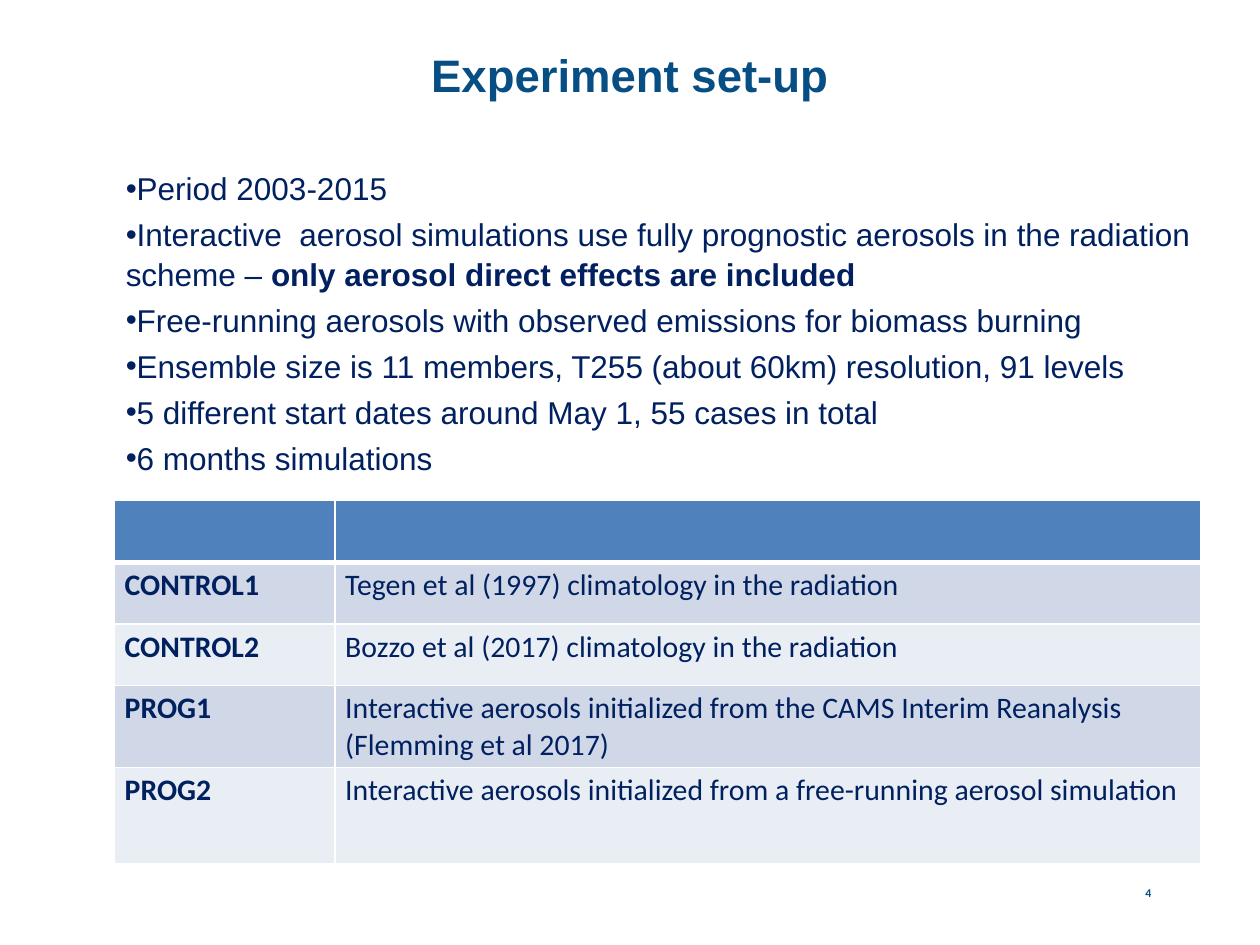
from pptx import Presentation
from pptx import util as u
from pptx.dml.color import RGBColor
from pptx.enum import text
from pptx.oxml import parse_xml
from pptx.oxml.ns import nsdecls

TEAL = RGBColor(0x06, 0x4E, 0x83)
NAVY = RGBColor(0x00, 0x20, 0x60)
WHITE = RGBColor(0xFF, 0xFF, 0xFF)
HEADER = RGBColor(0x4F, 0x81, 0xBD)
BANDS = (RGBColor(0xD0, 0xD8, 0xE8), RGBColor(0xE9, 0xED, 0xF4))

BULLETS = [
    ["Period 2003-2015"],
    ["Interactive  aerosol simulations use fully prognostic aerosols in the radiation scheme – ",
     "only aerosol direct effects are included"],
    ["Free-running aerosols with observed emissions for biomass burning"],
    ["Ensemble size is 11 members, T255 (about 60km) resolution, 91 levels"],
    ["5 different start dates around May 1, 55 cases in total"],
    ["6 months simulations"],
]
EXPERIMENTS = [
    ("", ""),
    ("CONTROL1", "Tegen et al (1997) climatology in the radiation"),
    ("CONTROL2", "Bozzo et al (2017) climatology in the radiation"),
    ("PROG1", "Interactive aerosols initialized from the CAMS Interim Reanalysis (Flemming et al 2017)"),
    ("PROG2", "Interactive aerosols initialized from a free-running aerosol simulation"),
]


class SlideBuilder:
    """Holds the style and the current slide; lengths are percentages of the slide size."""

    def __init__(self, presentation):
        self.width = presentation.slide_width
        self.height = presentation.slide_height
        self.slide = presentation.slides.add_slide(presentation.slide_layouts[6])

    def across(self, share):
        return u.Emu(round(self.width * share / 100))

    def down(self, share):
        return u.Emu(round(self.height * share / 100))

    def place(self, left, top, width, height):
        return self.across(left), self.down(top), self.across(width), self.down(height)

    def style(self, font, name, size, color, bold=False):
        font.name, font.size, font.bold = name, u.Pt(size), bold
        font.color.rgb = color

    def label(self, box, content, name, size, anchor):
        frame = self.slide.shapes.add_textbox(*self.place(*box)).text_frame
        frame.word_wrap = True
        frame.margin_left = frame.margin_right = frame.margin_top = frame.margin_bottom = 0
        frame.vertical_anchor = anchor
        frame.text = content
        paragraph = frame.paragraphs[0]
        paragraph.alignment = text.PP_ALIGN.CENTER
        self.style(paragraph.runs[0].font, name, size, TEAL, True)

    def bullets(self, box, items):
        frame = self.slide.shapes.add_textbox(*self.place(*box)).text_frame
        frame.word_wrap = True
        for index, parts in enumerate(items):
            paragraph = frame.add_paragraph() if index else frame.paragraphs[0]
            paragraph.line_spacing = 1.05
            if index:
                paragraph.space_before = u.Pt(3.6)
            properties = paragraph._p.get_or_add_pPr()
            properties.set("marL", "0")
            properties.set("indent", str(-u.Inches(0.07)))
            properties.append(parse_xml(f'<a:buFont {nsdecls("a")} typeface="Arial"/>'))
            properties.append(parse_xml(f'<a:buChar {nsdecls("a")} char="•"/>'))
            for position, part in enumerate(parts):
                run = paragraph.add_run()
                run.text = part
                self.style(run.font, "Arial", 18, NAVY, position > 0)

    def borders(self, cell, widths):
        properties = cell._tc.get_or_add_tcPr()
        for side, width in zip("LRTB", widths):
            properties.append(parse_xml(
                f'<a:ln{side} {nsdecls("a")} w="{u.Pt(width)}"><a:solidFill>'
                f'<a:srgbClr val="{WHITE}"/></a:solidFill></a:ln{side}>'))

    def table(self, box, rows, widths, heights):
        grid = self.slide.shapes.add_table(len(rows), len(widths), *self.place(*box)).table
        for column, width in zip(grid.columns, widths):
            column.width = self.across(width)
        for row, height in zip(grid.rows, heights):
            row.height = self.down(height)
        for r, row in enumerate(rows):
            for c, content in enumerate(row):
                cell = grid.cell(r, c)
                cell.margin_left = cell.margin_right = u.Inches(0.08)
                cell.margin_top = cell.margin_bottom = u.Inches(0.04)
                self.borders(cell, (1, 1, 3 if r == 1 else 1, 1 if r else 3))
                cell.fill.solid()
                cell.fill.fore_color.rgb = BANDS[(r - 1) % 2] if r else HEADER
                cell.text = content
                self.style(cell.text_frame.paragraphs[0].font, "Calibri", 17, NAVY, c == 0)
                for run in cell.text_frame.paragraphs[0].runs:
                    self.style(run.font, "Calibri", 17, NAVY, c == 0)


def main():
    presentation = Presentation()
    presentation.slide_width = u.Inches(10)
    presentation.slide_height = u.Inches(7.5)
    builder = SlideBuilder(presentation)
    builder.label((17.7, 5.2, 64.6, 5.33), "Experiment set-up", "Arial", 26, text.MSO_ANCHOR.MIDDLE)
    builder.label((82.3, 92, 17.7, 3.2), "4", "Calibri", 6.8, text.MSO_ANCHOR.BOTTOM)
    builder.table((9.1, 52.93, 86.2, 38.4), EXPERIMENTS, (17.5, 68.7), (6.6, 6.5, 6.5, 8.7, 10.2))
    builder.bullets((9, 17.07, 86.6, 33.6), BULLETS)
    presentation.save("out.pptx")


if __name__ == "__main__":
    main()
